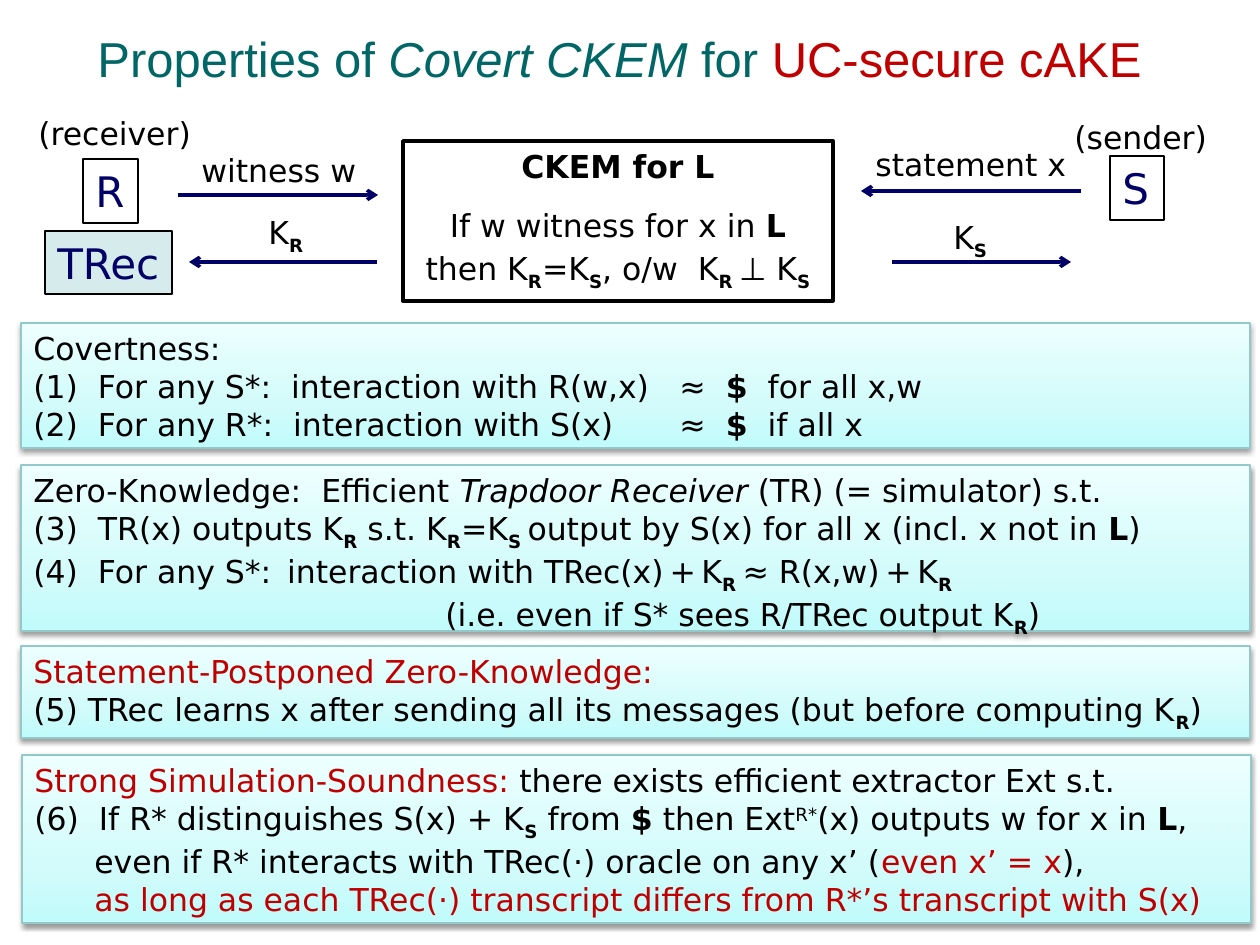
from copy import deepcopy

from lxml import etree
from pptx import Presentation
from pptx import util as u
from pptx.dml.color import RGBColor
from pptx.enum import shapes, text
from pptx.oxml.ns import qn

SCALE = 914400 / 126  # EMU per px
WIDTH, HEIGHT = 1260, 945
COLORS = {"teal": "006666", "red": "C00000", "navy": "000066", "black": "000000",
          "white": "FFFFFF", "mint": "D6EBEB", "edge": "94C9C9"}
PANEL_STOPS = [(0, "C1FBFB"), (0.35, "D3FBFB"), (1, "EDFFFF")]
BODY = "DejaVu Sans"
BASELINES = {"sub": "-25000", "sup": "30000"}

# Spans that recur in the formulas
SUB_R, SUB_S = ("R", "bold sub"), ("S", "bold sub")
LANGUAGE, COIN = ("L", "bold"), ("$", "bold")
THIN = (" ", "thin")
PLUS = [THIN, "+", THIN]


def px(value):
    return u.Emu(round(value * SCALE))


def rgb(name):
    return RGBColor.from_string(COLORS[name])


def add_spans(para, spans, size=18, font=BODY, color="black"):
    """Each span is a string or a (string, style words) pair."""
    for item in spans:
        words, style = (item, "") if isinstance(item, str) else item
        styles = style.split()
        span = para.add_run()
        span.text = words
        span.font.name = font
        span.font.size = u.Pt(10 if "thin" in styles else size)
        span.font.bold = "bold" in styles
        span.font.italic = "italic" in styles
        named = [name for name in styles if name in COLORS]
        span.font.color.rgb = rgb(named[0] if named else color)
        for name in styles:
            if name in BASELINES:
                span.font._element.set("baseline", BASELINES[name])


def indent(para, left):
    para._p.get_or_add_pPr().set("marL", str(px(left)))


def tab_stop(para, left):
    tabs = etree.SubElement(para._p.get_or_add_pPr(), qn("a:tabLst"))
    etree.SubElement(tabs, qn("a:tab"), pos=str(px(left)), algn="l")


def add_label(page, box, spans):
    label = page.shapes.add_textbox(*map(px, box))
    label.text_frame.word_wrap = False
    add_spans(label.text_frame.paragraphs[0], spans)


def add_box(page, box, fill=None, line="black", weight=0.75):
    shape = page.shapes.add_shape(shapes.MSO_SHAPE.RECTANGLE, *map(px, box))
    shape.shadow.inherit = False
    if fill:
        shape.fill.solid()
        shape.fill.fore_color.rgb = rgb(fill)
    else:
        shape.fill.background()
    shape.line.color.rgb = rgb(line)
    shape.line.width = u.Pt(weight)
    frame = shape.text_frame
    frame.word_wrap = True
    frame.vertical_anchor = text.MSO_ANCHOR.TOP
    frame.paragraphs[0].alignment = text.PP_ALIGN.LEFT
    return shape


def add_party(page, box, name, fill=None):
    frame = add_box(page, box, fill).text_frame
    frame.word_wrap = False
    add_spans(frame.paragraphs[0], [name], size=24, color="navy")


def add_arrow(page, start, end, y):
    arrow = page.shapes.add_connector(shapes.MSO_CONNECTOR.STRAIGHT,
                                      px(start), px(y), px(end), px(y))
    arrow.line.color.rgb = rgb("navy")
    arrow.line.width = u.Pt(2)
    etree.SubElement(arrow.line._get_or_add_ln(), qn("a:tailEnd"), type="arrow")
    etree.SubElement(arrow._element.spPr, qn("a:effectLst"))


def add_title(page, box):
    title = page.shapes.title
    title.left, title.top, title.width, title.height = map(px, box)
    frame = title.text_frame
    frame.auto_size = text.MSO_AUTO_SIZE.NONE
    frame.vertical_anchor = text.MSO_ANCHOR.BOTTOM
    frame.margin_bottom = px(38)
    para = frame.paragraphs[0]
    para.alignment = text.PP_ALIGN.CENTER
    add_spans(para, ["Properties of ", ("Covert CKEM ", "italic"), "for ",
                     ("UC-secure cAKE", "red")], 28, "Arial", "teal")


def add_receiver(page, x, y):
    add_label(page, (x + 5, y, 189, 50), ["(receiver)"])
    add_party(page, (x + 62, y + 51, 55, 64), "R")
    add_party(page, (x + 24, y + 123, 127, 63), "TRec", "mint")
    add_label(page, (x + 168, y + 37, 183, 50), ["witness w"])
    add_arrow(page, x + 157, x + 357, y + 87)
    add_label(page, (x + 235, y + 99, 64, 50), ["K", SUB_R])
    add_arrow(page, x + 356, x + 168, y + 154)


def add_sender(page, x, y):
    add_label(page, (x + 201, y + 4, 164, 50), ["(sender)"])
    add_party(page, (x + 249, y + 48, 54, 64), "S")
    add_label(page, (x + 2, y + 31, 218, 50), ["statement x"])
    add_arrow(page, x + 220, x, y + 83)
    add_label(page, (x + 80, y + 104, 62, 50), ["K", SUB_S])
    add_arrow(page, x + 31, x + 210, y + 154)


def add_ckem(page, box):
    frame = add_box(page, box, "white", weight=2).text_frame
    lines = [
        (12, [("CKEM for L", "bold")]),
        (3, ["If w witness for x in ", LANGUAGE]),
        (3, ["then K", SUB_R, "=K", SUB_S, ", o/w  K", ("R ", "bold sub"), "⊥ K", SUB_S]),
    ]
    for index, (after, spans) in enumerate(lines):
        para = frame.add_paragraph() if index else frame.paragraphs[0]
        para.alignment = text.PP_ALIGN.CENTER
        para.space_after = u.Pt(after)
        add_spans(para, spans)


def add_panel(page, box, lines):
    """Each line is (left indent, tab position, spans)."""
    panel = add_box(page, box, line="edge")
    # Gradient from the bottom edge upwards
    panel.fill.gradient()
    panel.fill.gradient_angle = 90
    stops = panel._element.spPr.find(".//" + qn("a:gsLst"))
    stops.insert(1, deepcopy(stops[0]))
    for stop, (position, color) in zip(panel.fill.gradient_stops, PANEL_STOPS):
        stop.position = position
        stop.color.rgb = RGBColor.from_string(color)
    # Soft shadow below
    effects = panel._element.spPr.find(qn("a:effectLst"))
    shadow = etree.SubElement(effects, qn("a:outerShdw"), blurRad=str(u.Pt(3.1)),
                              dist=str(u.Pt(1.6)), dir="5400000", rotWithShape="0")
    tone = etree.SubElement(shadow, qn("a:srgbClr"), val=COLORS["black"])
    etree.SubElement(tone, qn("a:alpha"), val="38000")
    # Text
    frame = panel.text_frame
    for index, (left, tab, spans) in enumerate(lines):
        para = frame.add_paragraph() if index else frame.paragraphs[0]
        para.alignment = text.PP_ALIGN.LEFT
        if left:
            indent(para, left)
        if tab:
            tab_stop(para, tab)
        add_spans(para, spans)


PANELS = [
    ((21, 323, 1229, 125), [
        (0, 0, ["Covertness:"]),
        (0, 646, ["(1)  For any S*:  interaction with R(w,x)\t≈  ", COIN, "  for all x,w"]),
        (0, 646, ["(2)  For any R*:  interaction with S(x)\t≈  ", COIN, "  if all x"]),
    ]),
    ((21, 465, 1229, 166), [
        (0, 0, ["Zero-Knowledge:  Efficient ", ("Trapdoor Receiver", "italic"),
                " (TR) (= simulator) s.t."]),
        (0, 0, ["(3)  TR(x) outputs K", SUB_R, " s.t. K", SUB_R, "=K", ("S ", "bold sub"),
                "output by S(x) for all x (incl. x not in ", LANGUAGE, ")"]),
        (0, 0, ["(4)  For any S*: ", THIN, "interaction with TRec(x)", *PLUS, "K",
                ("R ", "bold sub"), "≈ R(x,w)", *PLUS, "K", SUB_R]),
        (412, 0, ["(i.e. even if S* sees R/TRec output K", SUB_R, ")"]),
    ]),
    ((21, 646, 1229, 92), [
        (0, 0, [("Statement-Postponed Zero-Knowledge:", "red")]),
        (0, 0, ["(5) TRec learns x after sending all its messages (but before computing K",
                SUB_R, ")"]),
    ]),
    ((22, 755, 1229, 168), [
        (0, 0, [("Strong Simulation-Soundness: ", "red"),
                "there exists efficient extractor Ext s.t."]),
        (0, 0, ["(6)  If R* distinguishes S(x) + K", SUB_S, " from ", COIN, " then Ext",
                ("R*", "sup"), "(x) outputs w for x in ", LANGUAGE, ","]),
        (60, 0, ["even if R* interacts with TRec(⋅) oracle on any x’ (",
                 ("even x’ = x", "red"), "),"]),
        (60, 0, [("as long as each TRec(⋅) transcript differs from R*’s transcript with S(x)",
                  "red")]),
    ]),
]


def main():
    deck = Presentation()
    deck.slide_width, deck.slide_height = px(WIDTH), px(HEIGHT)
    page = deck.slides.add_slide(deck.slide_layouts[5])
    add_title(page, (63, 21, 1113, 104))
    add_receiver(page, 21, 108)
    add_ckem(page, (403, 141, 430, 160))
    add_sender(page, 861, 108)
    for box, lines in PANELS:
        add_panel(page, box, lines)
    deck.save("out.pptx")


if __name__ == "__main__":
    main()
